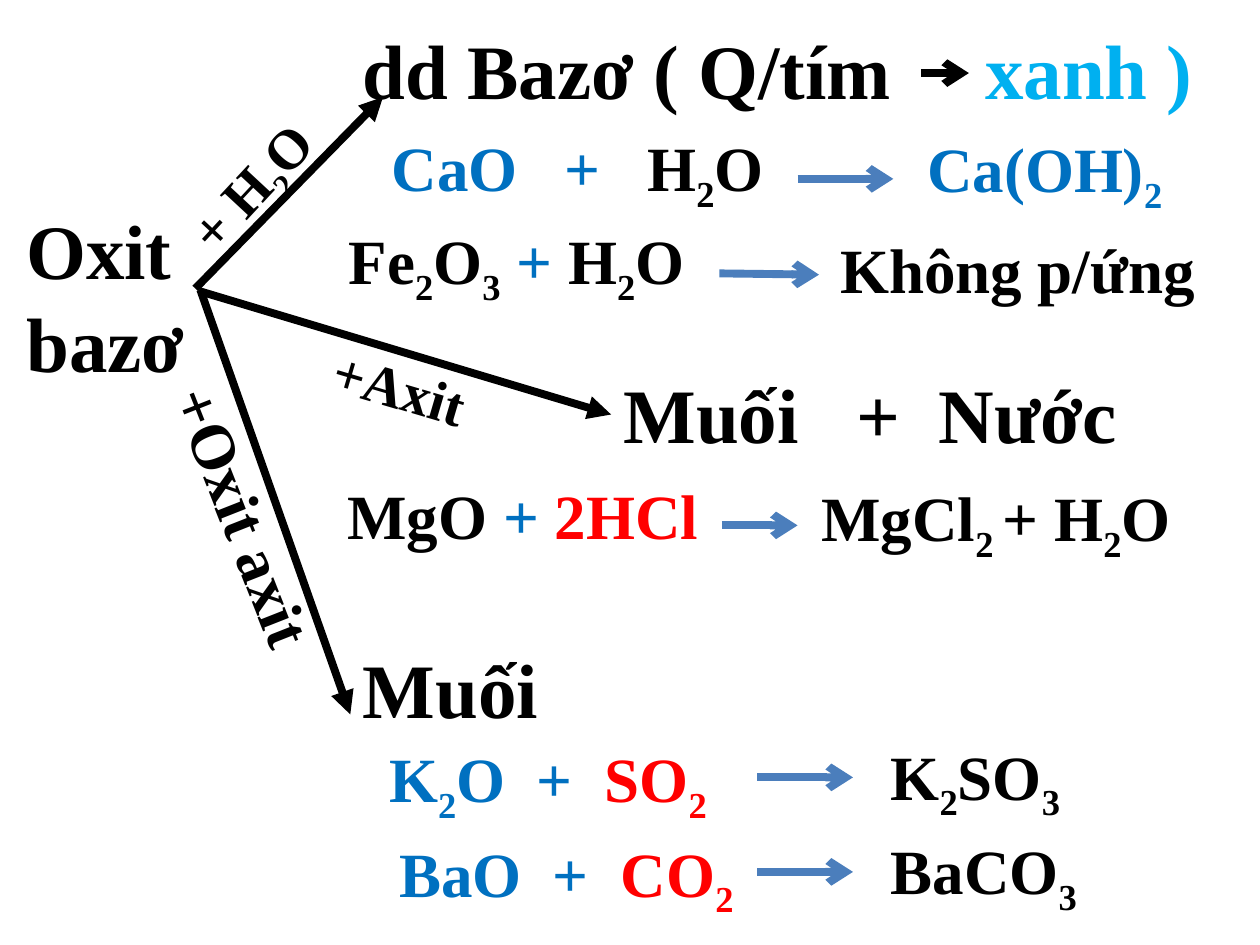
from lxml import etree
from pptx import Presentation
from pptx.dml.color import RGBColor
from pptx.enum import shapes, text
from pptx.oxml import ns
from pptx.util import Inches, Pt

BLACK, BLUE, SKY, RED, STEEL = "000000", "0070C0", "00B0F0", "FF0000", "4B7EBC"
HEADING, FORMULA, BRANCH = 44, 36, 32


def rgb(value):
    return RGBColor.from_string(value)


def add_tab_stops(paragraph, stops):
    tabs = etree.SubElement(paragraph._p.get_or_add_pPr(), ns.qn("a:tabLst"))
    for stop in stops:
        etree.SubElement(tabs, ns.qn("a:tab"), pos=str(Inches(stop)), algn="l")


def add_colored_runs(paragraph, pieces):
    """Write (colour, text) pieces; text between tildes is subscript."""
    for color, content in pieces:
        for index, part in enumerate(content.split("~")):
            if not part:
                continue
            run = paragraph.add_run()
            run.text = part
            run.font.color.rgb = rgb(color)
            if index % 2:
                run.font._element.set("baseline", "-25000")


def add_label(slide, box, size, *lines, stops=(), rotation=0):
    """Each line is a list of (colour, text) pieces."""
    label = slide.shapes.add_textbox(*map(Inches, box))
    label.rotation = rotation
    frame = label.text_frame
    frame.word_wrap = True
    frame.auto_size = text.MSO_AUTO_SIZE.SHAPE_TO_FIT_TEXT
    for index, pieces in enumerate(lines):
        paragraph = frame.add_paragraph() if index else frame.paragraphs[0]
        if stops:
            add_tab_stops(paragraph, stops)
        paragraph.font.name = "Times New Roman"
        paragraph.font.size = Pt(size)
        paragraph.font.bold = True
        add_colored_runs(paragraph, pieces)


def add_arrow(slide, start, end, color, head):
    arrow = slide.shapes.add_connector(
        shapes.MSO_CONNECTOR.STRAIGHT, *map(Inches, start + end))
    arrow.line.color.rgb = rgb(color)
    arrow.line.width = Pt(4.5)
    etree.SubElement(arrow.line._get_or_add_ln(), ns.qn("a:tailEnd"), type=head)
    etree.SubElement(arrow._element.spPr, ns.qn("a:effectLst"))


def add_branches(slide):
    for start, end in [((1.55, 2.29), (3.04, 0.77)),
                       ((1.58, 2.31), (4.85, 3.29)),
                       ((1.59, 2.3), (2.78, 5.67))]:
        add_arrow(slide, start, end, BLACK, "triangle")
    for box, size, rotation, reagent in [
            ((1.18, 0.89, 2.11, 0.64), BRANCH, 312.9, "+ H~2~O"),
            ((2.53, 2.84, 1.86, 0.64), BRANCH, 16.4, "+Axit"),
            ((0.42, 4.25, 3.44, 0.71), FORMULA, 68.5, "+Oxit axit")]:
        add_label(slide, box, size, [(BLACK, reagent)], rotation=rotation)


def add_headings(slide):
    add_label(slide, (0.11, 1.56, 1.58, 1.58), HEADING,
              [(BLACK, "Oxit")], [(BLACK, "bazơ")])
    add_label(slide, (2.78, 0.13, 7.03, 0.84), HEADING,
              [(BLACK, "dd Bazơ ( Q/tím\t"), (SKY, "xanh )")], stops=(4.94,))
    add_arrow(slide, (7.31, 0.58), (7.69, 0.58), BLACK, "arrow")
    add_label(slide, (4.85, 2.86, 4.5, 0.84), HEADING,
              [(BLACK, "Muối\t+\tNước")], stops=(1.85, 2.5))
    add_label(slide, (2.78, 5.04, 2.08, 0.84), HEADING, [(BLACK, "Muối")])


def add_reaction(slide, left, reagents, arrow, right, product, stops=()):
    """left and right are (x, y, width); arrow is (start, end)."""
    add_label(slide, left + (0.71,), FORMULA, reagents, stops=stops)
    add_arrow(slide, *arrow, STEEL, "arrow")
    add_label(slide, right + (0.71,), FORMULA, [product])


def add_reactions(slide):
    add_reaction(slide, (3.01, 0.97, 4.99),
                 [(BLUE, "CaO\t+\t"), (BLACK, "H~2~O")],
                 ((6.33, 1.42), (7.09, 1.42)),
                 (7.26, 0.98, 2.66), (BLUE, "Ca(OH)~2~"), stops=(1.37, 2.03))
    add_reaction(slide, (2.67, 1.71, 3.63),
                 [(BLACK, "Fe~2~O~3~"), (BLUE, " + "), (BLACK, "H~2~O")],
                 ((5.71, 2.17), (6.5, 2.18)),
                 (6.57, 1.78, 3.93), (BLACK, "Không p/ứng"))
    add_reaction(slide, (2.66, 3.73, 4.99),
                 [(BLACK, "MgO"), (BLUE, " + "), (RED, "2HCl")],
                 ((5.73, 4.17), (6.33, 4.17)),
                 (6.42, 3.75, 4.08), (BLACK, "MgCl~2 ~+ H~2~O"))
    add_reaction(slide, (2.99, 5.82, 4.76),
                 [(BLUE, "K~2~O\t+\t"), (RED, "SO~2~")],
                 ((6.01, 6.17), (6.77, 6.17)),
                 (6.97, 5.8, 2.94), (BLACK, "K~2~SO~3~"), stops=(1.17, 1.71))
    add_reaction(slide, (3.07, 6.57, 4.76),
                 [(BLUE, "BaO\t+\t"), (RED, "CO~2~")],
                 ((6.01, 6.92), (6.77, 6.92)),
                 (6.97, 6.55, 2.94), (BLACK, "BaCO~3~"), stops=(1.22, 1.76))


def main():
    deck = Presentation()
    deck.slide_width, deck.slide_height = Inches(10), Inches(7.5)
    slide = deck.slides.add_slide(deck.slide_layouts[6])
    add_branches(slide)
    add_headings(slide)
    add_reactions(slide)
    deck.save("out.pptx")


if __name__ == "__main__":
    main()
